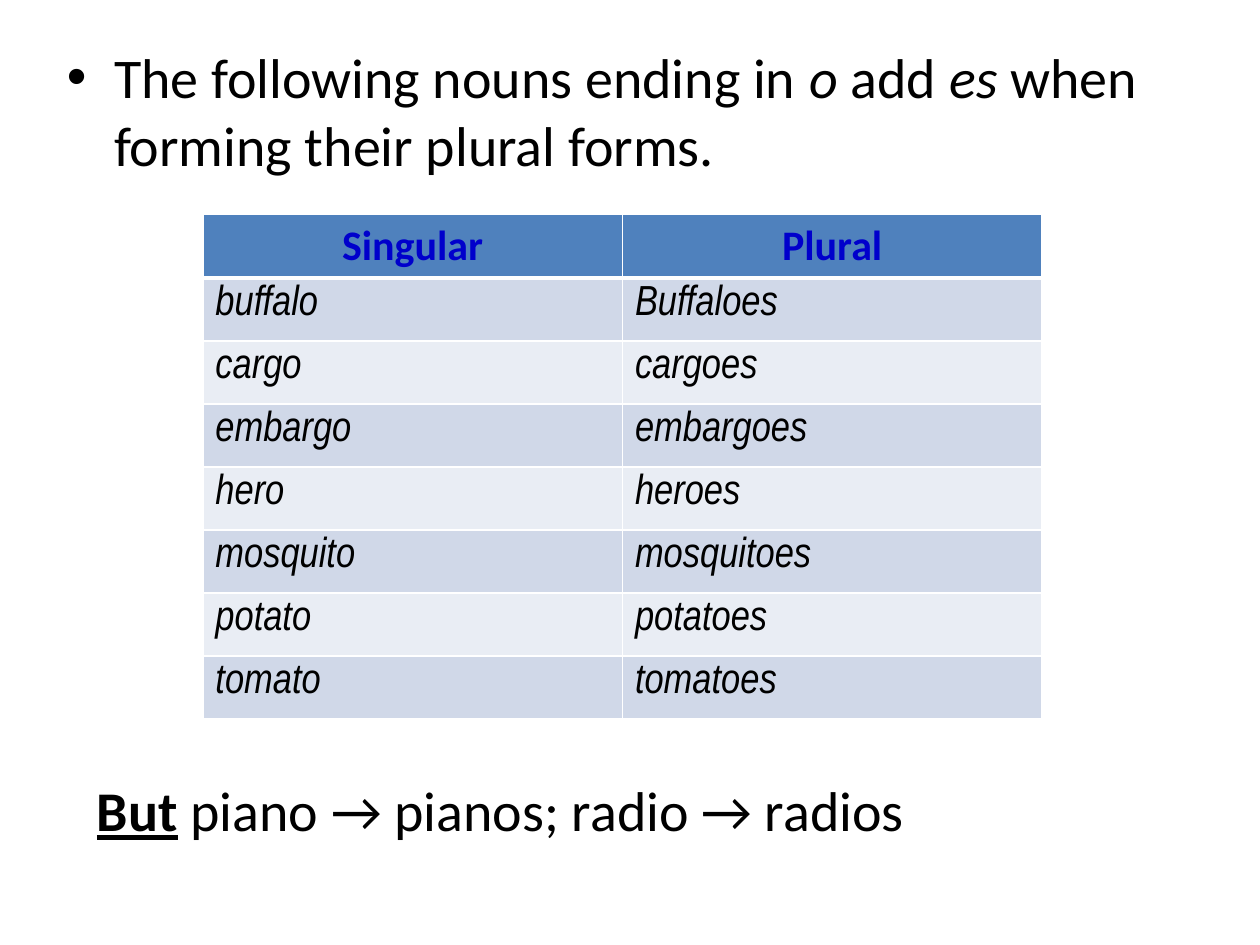
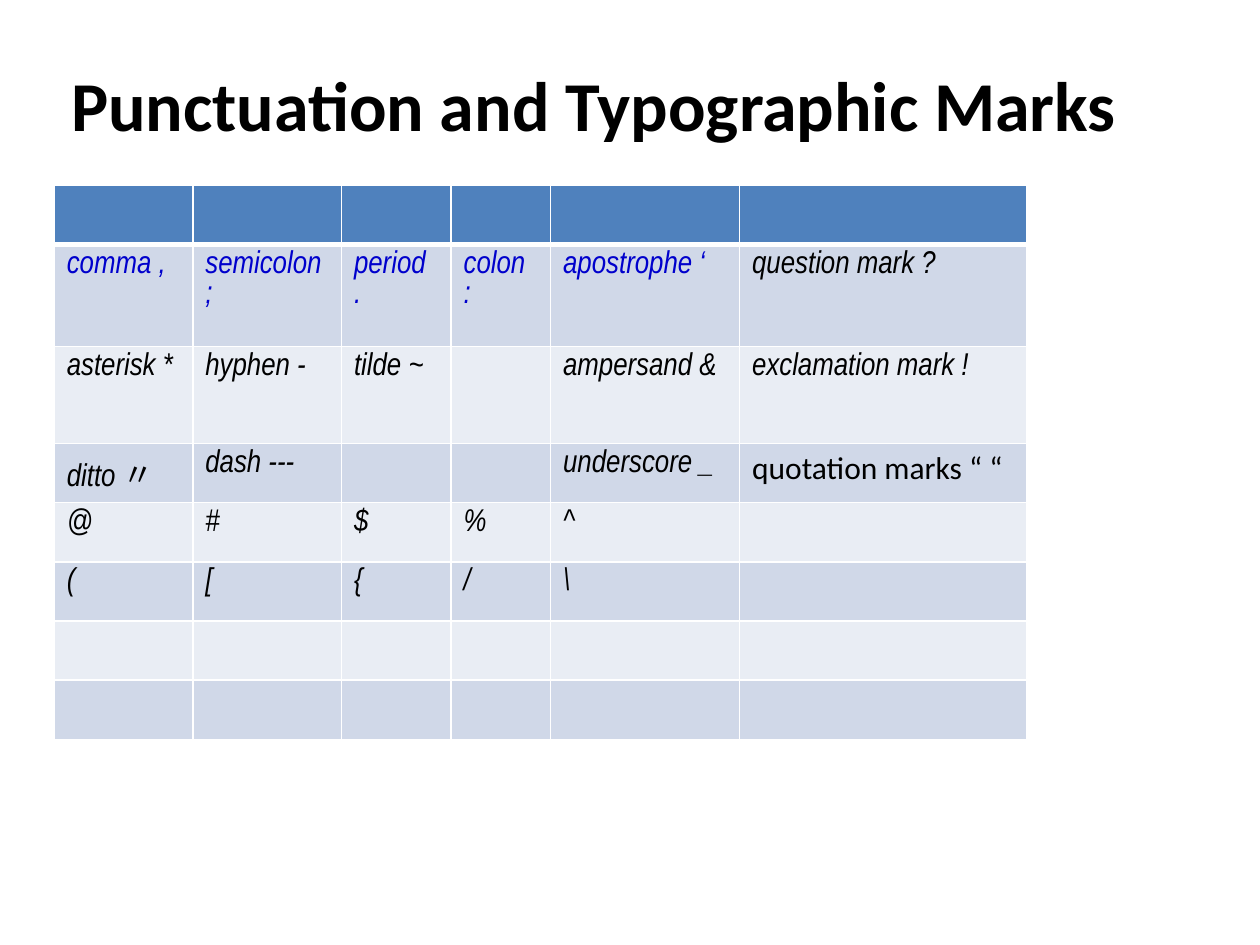
"""Build two slides on irregular plurals and punctuation marks."""
from lxml.etree import SubElement
from pptx import Presentation
from pptx.dml.color import RGBColor
from pptx.enum.text import MSO_ANCHOR, MSO_AUTO_SIZE, PP_ALIGN
from pptx.oxml.ns import qn
from pptx.util import Inches, Pt

BLACK = RGBColor(0x00, 0x00, 0x00)
WHITE = RGBColor(0xFF, 0xFF, 0xFF)
ACCENT_BLUE = RGBColor(0x00, 0x00, 0xCC)
HEADER_FILL = RGBColor(0x4F, 0x81, 0xBD)
BAND_FILLS = [RGBColor(0xE9, 0xED, 0xF4), RGBColor(0xD0, 0xD8, 0xE8)]
TEXT_FONT = "Calibri"
TABLE_FONT = "Arial Narrow"


def format_run(run, size, font=TEXT_FONT, color=BLACK, bold=False, italic=False):
    run.font.size = Pt(size)
    run.font.name = font
    run.font.color.rgb = color
    run.font.bold = bold
    run.font.italic = italic


def add_banded_table(slide, left, top, widths, heights, rows):
    shape = slide.shapes.add_table(len(heights), len(widths), Inches(left), Inches(top),
                                   Inches(sum(widths)), Inches(sum(heights)))
    table = shape.table
    for column, width in zip(table.columns, widths):
        column.width = Inches(width)
    for row_index, height in enumerate(heights):
        table.rows[row_index].height = Inches(height)
        for column_index in range(len(widths)):
            cell = table.cell(row_index, column_index)
            properties = cell._tc.get_or_add_tcPr()
            for side in ("L", "R", "T", "B"):
                thick = (row_index, side) in ((0, "B"), (1, "T"))
                line = SubElement(properties, qn(f"a:ln{side}"), w=str(Pt(3 if thick else 1)))
                fill = SubElement(line, qn("a:solidFill"))
                SubElement(fill, qn("a:srgbClr"), val=str(WHITE))
            cell.fill.solid()
            cell.fill.fore_color.rgb = BAND_FILLS[row_index % 2] if row_index else HEADER_FILL
            if row_index < len(rows) and rows[row_index][column_index]:
                cell.text = rows[row_index][column_index]
    return table


presentation = Presentation()
presentation.slide_width = Inches(10)
presentation.slide_height = Inches(7.5)

plural_slide = presentation.slides.add_slide(presentation.slide_layouts[1])
title = plural_slide.shapes.title
title.element.getparent().remove(title.element)

rule_body = plural_slide.placeholders[1]
rule_body.left, rule_body.top = Inches(0.43), Inches(0.29)
rule_body.width, rule_body.height = Inches(9.06), Inches(1.18)
rule_body.text_frame.auto_size = MSO_AUTO_SIZE.NONE
rule_paragraph = rule_body.text_frame.paragraphs[0]
for text, italic in [("The following nouns ending in ", False), ("o ", True), ("add ", False),
                     ("es", True), (" when forming their plural forms.", False)]:
    run = rule_paragraph.add_run()
    run.text = text
    format_run(run, 32, italic=italic)

plural_rows = [
    ["Singular", "Plural"],
    ["buffalo", "Buffaloes"],
    ["cargo", "cargoes"],
    ["embargo", "embargoes"],
    ["hero", "heroes"],
    ["mosquito", "mosquitoes"],
    ["potato", "potatoes"],
    ["tomato", "tomatoes"],
]
plural_table = add_banded_table(plural_slide, 1.61, 1.7, [3.33] * 2, [0.5] * 8, plural_rows)
for row_index, row in enumerate(plural_table.rows):
    for cell in row.cells:
        paragraph = cell.text_frame.paragraphs[0]
        if row_index == 0:
            cell.vertical_anchor = MSO_ANCHOR.MIDDLE
            paragraph.alignment = PP_ALIGN.CENTER
            format_run(paragraph.runs[0], 24, color=ACCENT_BLUE, bold=True)
        else:
            format_run(paragraph.runs[0], 24, TABLE_FONT, italic=True)

exception_box = plural_slide.shapes.add_textbox(Inches(0.67), Inches(6.11), Inches(8.03), Inches(0.64))
exception_box.text_frame.word_wrap = True
exception_paragraph = exception_box.text_frame.paragraphs[0]
for text, emphasis in [("But", True), (" piano → pianos; radio → radios", False)]:
    run = exception_paragraph.add_run()
    run.text = text
    format_run(run, 32, bold=emphasis)
    run.font.underline = emphasis

marks_slide = presentation.slides.add_slide(presentation.slide_layouts[5])
title = marks_slide.shapes.title
title.left, title.top = Inches(0.28), Inches(0.44)
title.width, title.height = Inches(9.13), Inches(0.77)
title.text_frame.text = "Punctuation and Typographic Marks"
title.text_frame.auto_size = MSO_AUTO_SIZE.NONE
title.text_frame.vertical_anchor = MSO_ANCHOR.TOP
title.text_frame.margin_right = Inches(0.37)
title.text_frame.paragraphs[0].alignment = PP_ALIGN.CENTER
format_run(title.text_frame.paragraphs[0].runs[0], 40, bold=True)

mark_rows = [
    [""] * 6,
    ["comma ,", "semicolon ;", "period .", "colon :", "apostrophe ‘", "question mark ?"],
    ["asterisk *", "hyphen -", "tilde ~", "", "ampersand &", "exclamation mark !"],
    ["ditto ", "dash ---", "", "", "underscore _", "quotation marks “ “"],
    ["@", "#", "$", "%", "^", ""],
    ["(", "[", "{", "/", "\\", ""],
]
marks_table = add_banded_table(marks_slide, 0.43, 1.47, [1.1, 1.18, 0.87, 0.79, 1.5, 2.28],
                               [0.47, 0.81, 0.77] + [0.47] * 5, mark_rows)
for row_index, row in enumerate(marks_table.rows):
    for column_index, cell in enumerate(row.cells):
        color = ACCENT_BLUE if row_index == 1 and column_index < 5 else BLACK
        for run in cell.text_frame.paragraphs[0].runs:
            format_run(run, 18, TABLE_FONT, color, italic=True)

ditto_mark = marks_table.cell(3, 0).text_frame.paragraphs[0].add_run()
ditto_mark.text = "〃"
quotation_marks = marks_table.cell(3, 5).text_frame.paragraphs[0].runs[0]
for run in (ditto_mark, quotation_marks):
    format_run(run, 18)

presentation.save("out.pptx")
